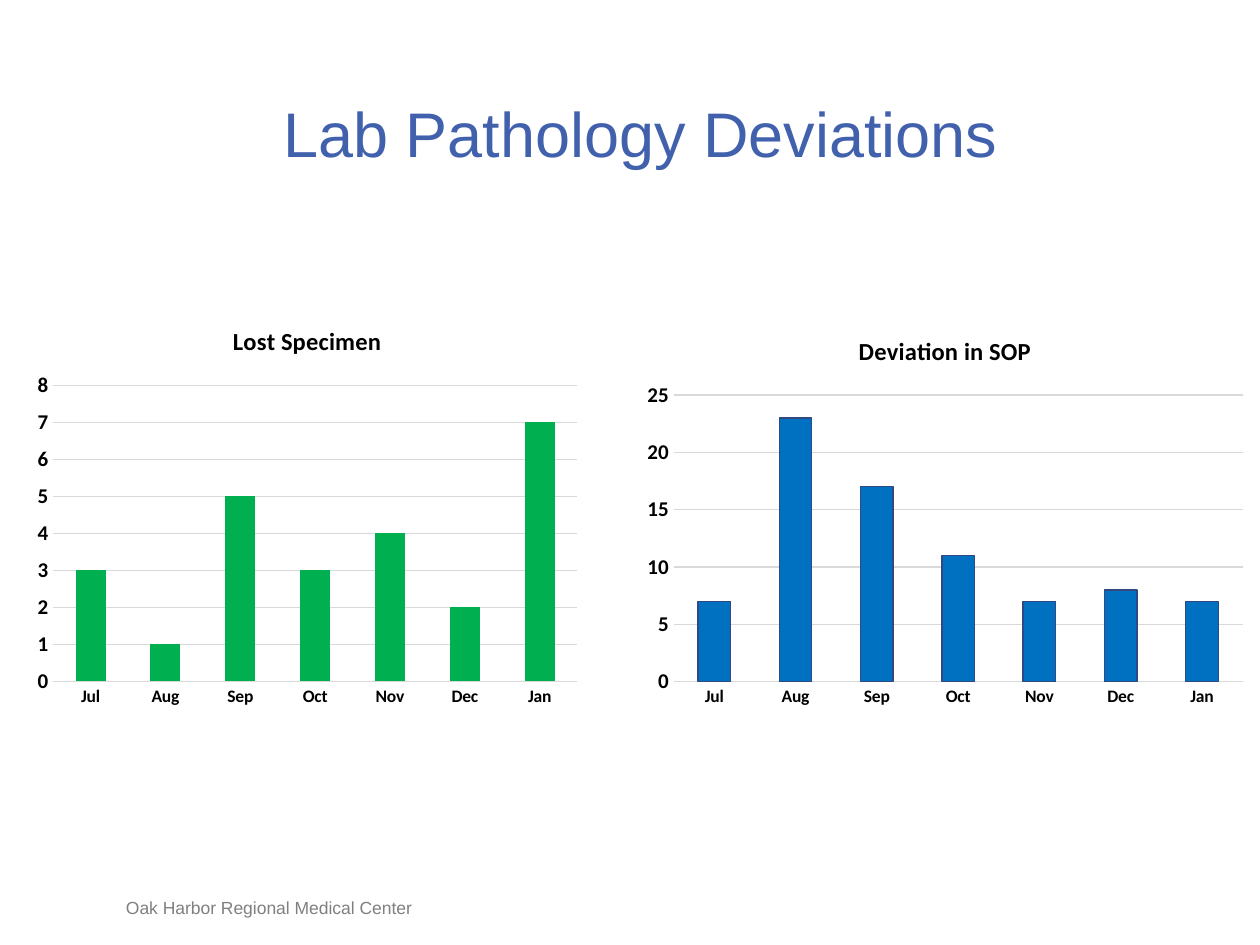
import pptx
import pptx.chart.data
import pptx.dml.color
import pptx.enum.chart
import pptx.enum.text
import pptx.util
from pptx.util import Cm

COLORS = {
    "title": "4261AD",
    "footer": "808080",
    "text": "000000",
    "grid": "D9D9D9",
    "lost": "00B050",
    "deviation": "0070C0",
    "deviation_edge": "314982",
}
MONTHS = ["Jul", "Aug", "Sep", "Oct", "Nov", "Dec", "Jan"]


def rgb(name):
    return pptx.dml.color.RGBColor.from_string(COLORS[name])


def style_font(font, size, color, name="Calibri", bold=True):
    font.name = name
    font.size = pptx.util.Pt(size)
    font.bold = bold
    font.color.rgb = rgb(color)


def style_line(line, color):
    line.color.rgb = rgb(color)
    line.width = pptx.util.Pt(0.75)


def add_text(page, text, place, size, color, align, anchor):
    box = page.shapes.add_textbox(*place)
    frame = box.text_frame
    frame.word_wrap = True
    frame.vertical_anchor = anchor
    frame.margin_left = frame.margin_right = 0
    frame.margin_top = frame.margin_bottom = 0
    para = frame.paragraphs[0]
    para.alignment = align
    span = para.add_run()
    span.text = text
    style_font(span.font, size, color, "Arial", False)


def style_axes(chart):
    tick_none = pptx.enum.chart.XL_TICK_MARK.NONE
    months, counts = chart.category_axis, chart.value_axis
    for axis, size in ((months, 10), (counts, 12)):
        axis.major_tick_mark = axis.minor_tick_mark = tick_none
        style_font(axis.tick_labels.font, size, "text")
    style_line(months.format.line, "grid")
    counts.format.line.fill.background()
    counts.has_major_gridlines = True
    style_line(counts.major_gridlines.format.line, "grid")


def add_column_chart(page, title, values, place, fill, edge=None):
    data = pptx.chart.data.CategoryChartData()
    data.categories = MONTHS
    data.add_series(title, values)
    kind = pptx.enum.chart.XL_CHART_TYPE.COLUMN_CLUSTERED
    chart = page.shapes.add_chart(kind, *place, data).chart
    style_font(chart.font, 10, "text", bold=False)
    chart.has_legend = False

    chart.has_title = True
    span = chart.chart_title.text_frame.paragraphs[0].add_run()
    span.text = title
    style_font(span.font, 14, "text")
    chart.chart_title.include_in_layout = False
    style_axes(chart)

    plot = chart.plots[0]
    plot.gap_width = 150
    plot.vary_by_categories = False
    columns = plot.series[0].format
    columns.fill.solid()
    columns.fill.fore_color.rgb = rgb(fill)
    if edge:
        style_line(columns.line, edge)
    else:
        columns.line.fill.background()


def main():
    deck = pptx.Presentation()
    deck.slide_width, deck.slide_height = Cm(25.4), Cm(19.05)
    page = deck.slides.add_slide(deck.slide_layouts[6])
    align = pptx.enum.text.PP_ALIGN
    anchor = pptx.enum.text.MSO_ANCHOR

    add_text(page, "Oak Harbor Regional Medical Center",
             (Cm(2.54), Cm(18.08), Cm(8.05), Cm(0.43)),
             10, "footer", align.LEFT, anchor.BOTTOM)
    add_text(page, "Lab Pathology Deviations",
             (Cm(2.54), Cm(1.9), Cm(20.75), Cm(1.55)),
             36, "title", align.CENTER, anchor.TOP)
    add_column_chart(page, "Deviation in SOP", [7, 23, 17, 11, 7, 8, 7],
                     (Cm(12.8), Cm(6.35), Cm(12.5), Cm(8.05)),
                     "deviation", "deviation_edge")
    add_column_chart(page, "Lost Specimen", [3, 1, 5, 3, 4, 2, 7],
                     (Cm(0.53), Cm(6.15), Cm(11.33), Cm(8.25)), "lost")
    deck.save("out.pptx")


if __name__ == "__main__":
    main()
